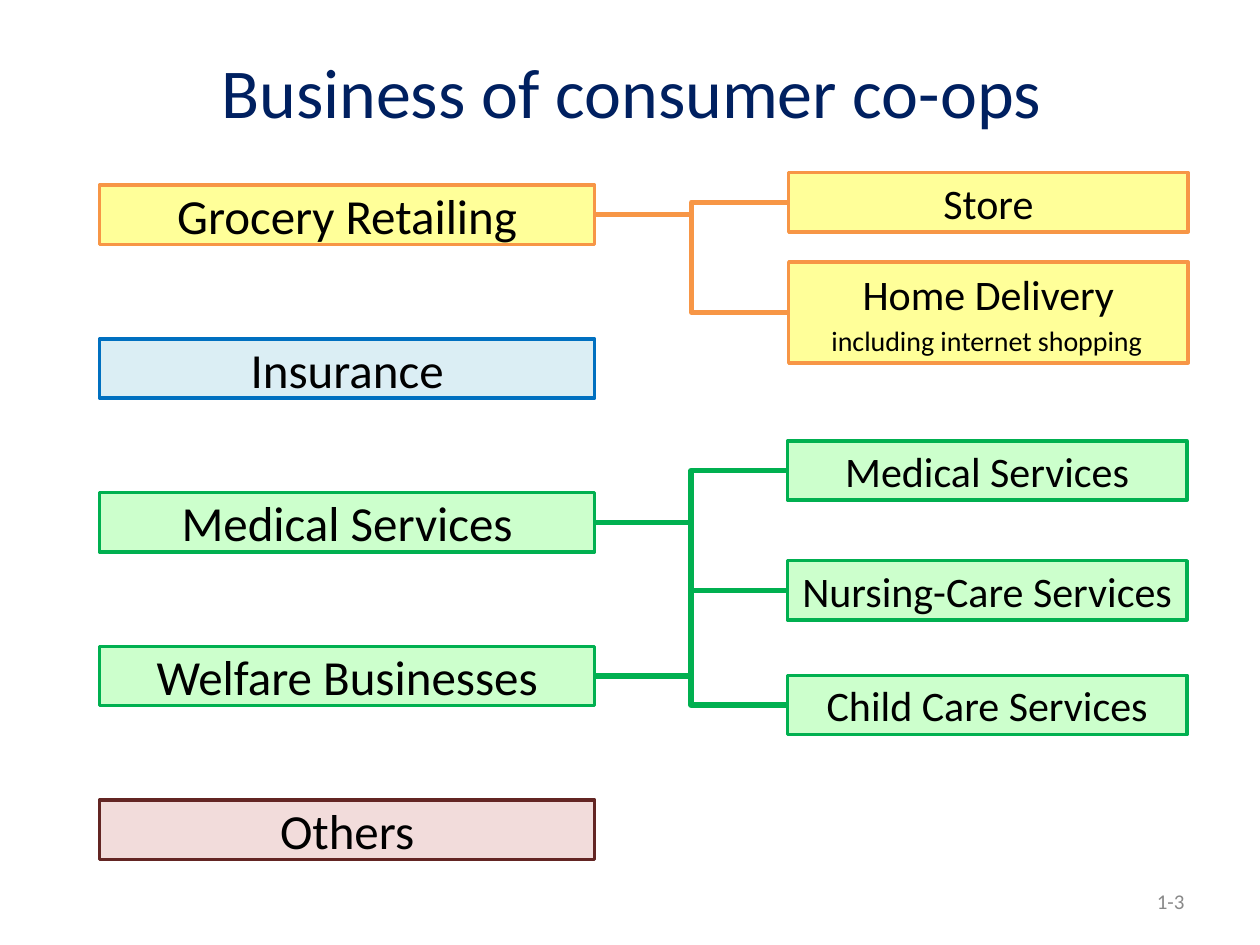
"""Build the slide that maps the businesses of consumer co-ops to their services."""
from dataclasses import dataclass

from lxml import etree
from pptx import Presentation
from pptx.dml.color import RGBColor as Rgb
from pptx.enum.shapes import MSO_CONNECTOR as Connector, MSO_SHAPE as Shape
from pptx.enum.text import MSO_ANCHOR as Anchor, PP_ALIGN as Align
from pptx.oxml.ns import qn
from pptx.util import Inches, Pt


@dataclass(frozen=True)
class Theme:
    """Colours, as fill and line pairs where boxes use them, and type sizes."""
    font: str = "Calibri"
    title: str = "002060"
    text: str = "000000"
    muted: str = "898989"
    retail: tuple = ("FFFF99", "F79646")
    insurance: tuple = ("DBEEF4", "0070C0")
    care: tuple = ("CCFFCC", "00B050")
    others: tuple = ("F2DCDB", "632523")
    title_size: int = 40
    business_size: int = 28
    service_size: int = 24
    note_size: int = 16
    number_size: int = 12
    box_line: int = 2
    link_line: int = 3


class SlideBuilder:
    """Draws styled elements on one slide."""

    def __init__(self, slide, theme):
        self.slide = slide
        self.theme = theme

    def set_text(self, frame, text, size, color, align, anchor):
        """Put one formatted paragraph into a text frame."""
        frame.text = text
        frame.word_wrap = True
        frame.vertical_anchor = anchor
        paragraph = frame.paragraphs[0]
        paragraph.alignment = align
        for run in paragraph.runs:
            run.font.name = self.theme.font
            run.font.size = Pt(size)
            run.font.color.rgb = Rgb.from_string(color)

    def title(self, text, left, top, width, height):
        """Move and fill the title placeholder."""
        title = self.slide.shapes.title
        title.left, title.top = Inches(left), Inches(top)
        title.width, title.height = Inches(width), Inches(height)
        self.set_text(title.text_frame, text, self.theme.title_size,
                      self.theme.title, Align.CENTER, Anchor.MIDDLE)

    def label(self, text, left, top, width, height, size, color,
              align=Align.LEFT, anchor=Anchor.TOP):
        """Add a plain text box."""
        label = self.slide.shapes.add_textbox(
            Inches(left), Inches(top), Inches(width), Inches(height))
        self.set_text(label.text_frame, text, size, color, align, anchor)

    def box(self, text, left, top, width, height, colors, size,
            anchor=Anchor.MIDDLE):
        """Add a process box in a fill and line pair."""
        box = self.slide.shapes.add_shape(
            Shape.FLOWCHART_PROCESS, Inches(left), Inches(top),
            Inches(width), Inches(height))
        fill, line = colors
        box.shadow.inherit = False
        box.fill.solid()
        box.fill.fore_color.rgb = Rgb.from_string(fill)
        box.line.color.rgb = Rgb.from_string(line)
        box.line.width = Pt(self.theme.box_line)
        self.set_text(box.text_frame, text, size, self.theme.text,
                      Align.CENTER, anchor)
        return box

    def link(self, business, service, colors):
        """Join a business to a service with an elbow connector."""
        link = self.slide.shapes.add_connector(
            Connector.ELBOW, business.left + business.width,
            business.top + business.height // 2,
            service.left, service.top + service.height // 2)
        link.begin_connect(business, 3)
        link.end_connect(service, 1)
        link.line.color.rgb = Rgb.from_string(colors[1])
        link.line.width = Pt(self.theme.link_line)
        etree.SubElement(link._element.spPr, qn("a:effectLst"))


def main():
    """Assemble and save the slide."""
    theme = Theme()
    deck = Presentation()
    deck.slide_width, deck.slide_height = Inches(10), Inches(7.5)
    builder = SlideBuilder(deck.slides.add_slide(deck.slide_layouts[5]), theme)
    builder.title("Business of consumer co-ops", 1.3, 0.33, 7.42, 0.77)

    box_height = 0.47
    businesses = [
        builder.box(name, 0.79, 1.47 + 1.22 * row, 3.93, box_height, colors,
                    theme.business_size)
        for row, (name, colors) in enumerate([
            ("Grocery Retailing", theme.retail),
            ("Insurance", theme.insurance),
            ("Medical Services", theme.care),
            ("Welfare Businesses", theme.care),
            ("Others", theme.others),
        ])
    ]
    grocery, _, medical, welfare, _ = businesses

    services = [
        ("Store", 6.26, 1.37, box_height, theme.retail, Anchor.MIDDLE, grocery),
        ("Home Delivery", 6.26, 2.08, 0.8, theme.retail, Anchor.TOP, grocery),
        ("Medical Services", 6.25, 3.5, box_height, theme.care, Anchor.MIDDLE, welfare),
        ("Nursing-Care Services", 6.25, 4.45, box_height, theme.care, Anchor.MIDDLE, medical),
        ("Child Care Services", 6.25, 5.36, box_height, theme.care, Anchor.MIDDLE, welfare),
    ]
    for name, left, top, height, colors, anchor, business in services:
        service = builder.box(name, left, top, 3.17, height, colors,
                              theme.service_size, anchor)
        builder.link(business, service, colors)

    builder.label("including internet shopping", 6.5, 2.52, 2.91, 0.37,
                  theme.note_size, theme.text)
    builder.label("1-3", 7.17, 6.95, 2.33, 0.4, theme.number_size,
                  theme.muted, Align.RIGHT, Anchor.MIDDLE)
    deck.save("out.pptx")


if __name__ == "__main__":
    main()
